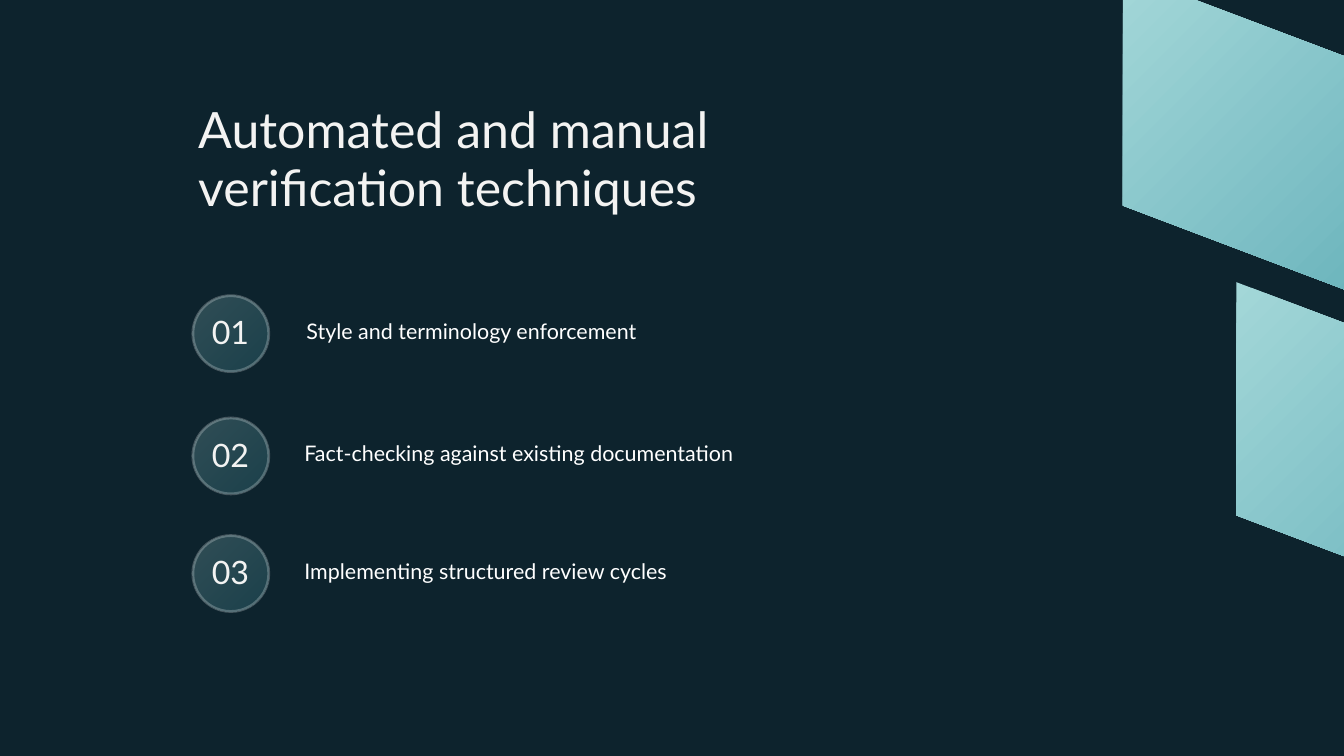
from lxml import etree
from pptx import Presentation
from pptx import util as u
from pptx.dml.color import RGBColor
from pptx.enum import shapes, text
from pptx.oxml.ns import qn

WIDTH, HEIGHT = 20, 11.25
FONT = "Lato"
COLORS = {
    "background": "0D232D",
    "light_teal": "A3D7D8",
    "deep_teal": "489EAB",
    "heading": "F3F3F2",
    "white": "FFFFFF",
}

CIRCLE_LEFT, CIRCLE_SIZE = 2.87, 1.13
NUMBER_LEFT, NUMBER_WIDTH = 2.93, 1
TEXT_DROP = 0.27  # from the top of a circle to the top of its texts

# Top of the circle, left and width of the label, label
TECHNIQUES = [
    (4.4, 4.56, 9.62, "Style and terminology enforcement"),
    (6.22, 4.53, 11.17, "Fact-checking against existing documentation"),
    (7.97, 4.53, 11.17, "Implementing structured review cycles"),
]
PANEL_CORNERS = [(16.71, -0.41), (18.4, 4.2)]
PANEL_WIDTH, PANEL_HEIGHT, PANEL_SLOPE = 7.4, 3.47, 2.8


def color(name):
    return RGBColor.from_string(COLORS[name])


def fill_teal(shape):
    """Fill from light at the top left to deep at the bottom right."""
    shape.shadow.inherit = False
    shape.fill.gradient()
    shape.fill.gradient_angle = 315
    for stop, name in zip(shape.fill.gradient_stops, ("light_teal", "deep_teal")):
        stop.color.rgb = color(name)


def set_opacity(shape, percent):
    """Apply one opacity to every fill and line colour of the shape."""
    for tint in shape._element.spPr.iter(qn("a:srgbClr")):
        etree.SubElement(tint, qn("a:alpha")).set("val", str(percent * 1000))


def add_text(slide, box, words, size, spacing, color_name, align=text.PP_ALIGN.LEFT):
    frame = slide.shapes.add_textbox(*map(u.Inches, box)).text_frame
    frame.word_wrap = True
    frame.margin_left = frame.margin_right = frame.margin_top = frame.margin_bottom = 0
    paragraph = frame.paragraphs[0]
    paragraph.text = words
    paragraph.alignment = align
    paragraph.line_spacing = u.Pt(spacing)
    paragraph.font.name = FONT
    paragraph.font.size = u.Pt(size)
    paragraph.font.color.rgb = color(color_name)


def add_panel(slide, left, top):
    """Add a slanted panel that runs off the right edge."""
    right = left + PANEL_WIDTH
    corners = [
        (left, top),
        (right, top + PANEL_SLOPE),
        (right, top + PANEL_SLOPE + PANEL_HEIGHT),
        (left, top + PANEL_HEIGHT),
    ]
    start, *others = [(u.Inches(x), u.Inches(y)) for x, y in corners]
    outline = slide.shapes.build_freeform(*start)
    outline.add_line_segments(others, close=True)
    panel = outline.convert_to_shape()
    fill_teal(panel)
    panel.line.fill.background()


def add_circle(slide, top):
    circle = slide.shapes.add_shape(
        shapes.MSO_SHAPE.OVAL,
        *map(u.Inches, (CIRCLE_LEFT, top, CIRCLE_SIZE, CIRCLE_SIZE)),
    )
    fill_teal(circle)
    circle.line.color.rgb = color("white")
    circle.line.width = u.Pt(3)
    set_opacity(circle, 24)


def add_technique(slide, number, top, left, width, label):
    add_circle(slide, top)
    text_top = top + TEXT_DROP
    add_text(slide, (NUMBER_LEFT, text_top, NUMBER_WIDTH, 0.57), f"{number:02}",
             34.5, 40, "heading", text.PP_ALIGN.CENTER)
    add_text(slide, (left, text_top, width, 0.4), label, 23, 32.2, "white")


def main():
    deck = Presentation()
    deck.slide_width, deck.slide_height = u.Inches(WIDTH), u.Inches(HEIGHT)
    slide = deck.slides.add_slide(deck.slide_layouts[6])
    slide.background.fill.solid()
    slide.background.fill.fore_color.rgb = color("background")

    add_text(slide, (2.95, 1.5, 10.31, 1.74),
             "Automated and manual verification techniques", 53.6, 62.1, "heading")
    for corner in PANEL_CORNERS:
        add_panel(slide, *corner)
    for number, technique in enumerate(TECHNIQUES, start=1):
        add_technique(slide, number, *technique)

    deck.save("out.pptx")


if __name__ == "__main__":
    main()
